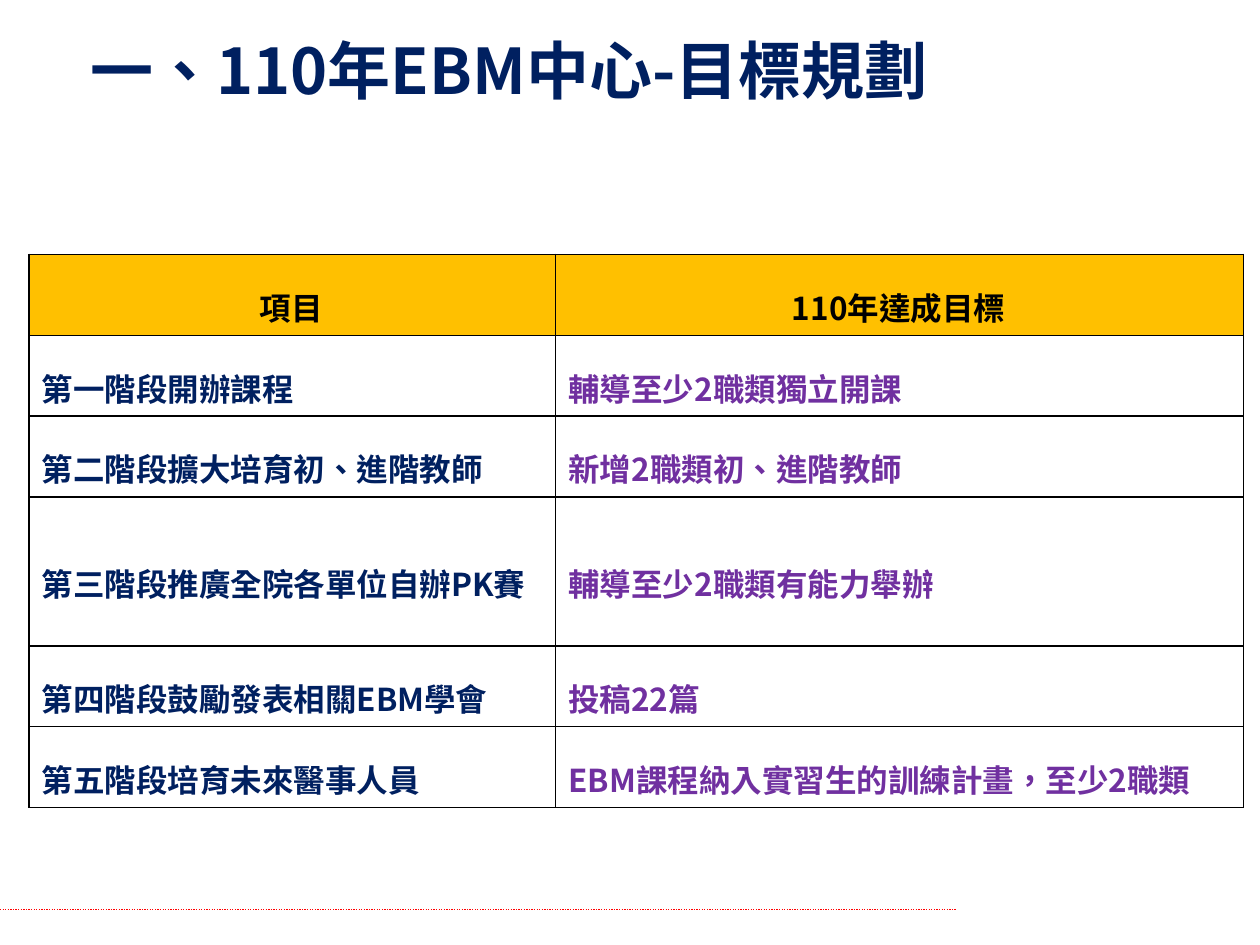
from lxml.etree import SubElement
from pptx import Presentation
from pptx.dml.color import RGBColor
from pptx.enum.dml import MSO_LINE
from pptx.enum.lang import MSO_LANGUAGE_ID
from pptx.enum.shapes import MSO_CONNECTOR
from pptx.enum.text import MSO_ANCHOR, PP_ALIGN
from pptx.oxml.ns import qn
from pptx.util import Cm, Pt

NAVY = RGBColor(0x00, 0x20, 0x60)
PURPLE = RGBColor(0x70, 0x30, 0xA0)
BLACK = RGBColor(0x00, 0x00, 0x00)
AMBER = RGBColor(0xFF, 0xC0, 0x00)
RED = RGBColor(0xFF, 0x00, 0x00)
FONT = "Noto Sans CJK SC"
COLUMN_WIDTHS = (Cm(10.62), Cm(13.87))
ROW_HEIGHT = Cm(1.63)
TALL_ROW_HEIGHT = Cm(3)
TALL_ROW = 3
ROWS = [
    ("項目", "110年達成目標"),
    ("第一階段開辦課程", "輔導至少2職類獨立開課"),
    ("第二階段擴大培育初、進階教師", "新增2職類初、進階教師"),
    ("第三階段推廣全院各單位自辦PK賽", "輔導至少2職類有能力舉辦"),
    ("第四階段鼓勵發表相關EBM學會", "投稿22篇"),
    ("第五階段培育未來醫事人員", "EBM課程納入實習生的訓練計畫，至少2職類"),
]


def set_attributes(target, values):
    """Set each named value on the target."""
    for name, value in values.items():
        setattr(target, name, value)


def write_text(paragraph, text, size, color):
    """Add one bold run in the slide's font, for Latin and East Asian text."""
    run = paragraph.add_run()
    run.text = text
    set_attributes(run.font, {
        "size": Pt(size), "bold": True, "name": FONT,
        "language_id": MSO_LANGUAGE_ID.TRADITIONAL_CHINESE,
    })
    run.font.color.rgb = color
    SubElement(run._r.get_or_add_rPr(), qn("a:ea"), typeface=FONT)


def add_title(slide, left, top, width, height):
    """Place the slide title in the given box."""
    frame = slide.shapes.add_textbox(left, top, width, height).text_frame
    set_attributes(frame, {"word_wrap": True, "vertical_anchor": MSO_ANCHOR.MIDDLE})
    write_text(frame.paragraphs[0], "一、110年EBM中心-目標規劃", 36, NAVY)


def add_borders(cell):
    """Draw a thin black line on every side of a cell."""
    properties = cell._tc.get_or_add_tcPr()
    for side in ("lnL", "lnR", "lnT", "lnB"):
        line = SubElement(properties, qn(f"a:{side}"), w=str(Pt(1)))
        fill = SubElement(line, qn("a:solidFill"))
        SubElement(fill, qn("a:srgbClr"), val=str(BLACK))


def fill_cell(cell, text, color, is_header):
    """Format one cell and write its text."""
    add_borders(cell)
    set_attributes(cell, {
        "margin_left": Cm(0.26), "margin_right": Cm(0.3),
        "margin_top": Cm(0.13), "margin_bottom": Cm(0.13),
        "vertical_anchor": MSO_ANCHOR.TOP if is_header else MSO_ANCHOR.MIDDLE,
    })
    if is_header:
        cell.fill.solid()
        cell.fill.fore_color.rgb = AMBER
    else:
        cell.fill.background()
    paragraph = cell.text_frame.paragraphs[0]
    set_attributes(paragraph, {
        "line_spacing": 1.5,
        "alignment": PP_ALIGN.CENTER if is_header else PP_ALIGN.LEFT,
    })
    write_text(paragraph, text, 18, color)


def add_goal_table(slide, left, top, width):
    """Place the table of stages and goals at the given corner and width."""
    height = ROW_HEIGHT * (len(ROWS) - 1) + TALL_ROW_HEIGHT
    table = slide.shapes.add_table(
        len(ROWS), len(COLUMN_WIDTHS), left, top, width, height).table
    set_attributes(table, {"first_row": False, "horz_banding": False})
    for column, column_width in zip(table.columns, COLUMN_WIDTHS):
        column.width = column_width
    for row_index, texts in enumerate(ROWS):
        is_header = row_index == 0
        colors = (BLACK, BLACK) if is_header else (NAVY, PURPLE)
        table.rows[row_index].height = (
            TALL_ROW_HEIGHT if row_index == TALL_ROW else ROW_HEIGHT)
        for column_index, (text, color) in enumerate(zip(texts, colors)):
            fill_cell(table.cell(row_index, column_index), text, color, is_header)


def add_footer_line(slide, left, top, width):
    """Draw the dotted red line above the foot of the slide."""
    connector = slide.shapes.add_connector(
        MSO_CONNECTOR.STRAIGHT, left, top, left + width, top)
    line = connector.line
    line.fill.solid()
    line.fill.fore_color.rgb = RED
    set_attributes(line, {"width": Pt(0.75), "dash_style": MSO_LINE.ROUND_DOT})
    SubElement(connector._element.spPr, qn("a:effectLst"))


def main():
    """Build the goal planning slide and save it."""
    presentation = Presentation()
    set_attributes(presentation, {"slide_width": Cm(25.4), "slide_height": Cm(19.05)})
    slide = presentation.slides.add_slide(presentation.slide_layouts[6])
    add_footer_line(slide, Cm(0), Cm(18.34), Cm(19.28))
    add_title(slide, Cm(1.57), Cm(0.33), Cm(22.23), Cm(2.13))
    add_goal_table(slide, Cm(0.58), Cm(5.13), sum(COLUMN_WIDTHS))
    presentation.save("out.pptx")


if __name__ == "__main__":
    main()
